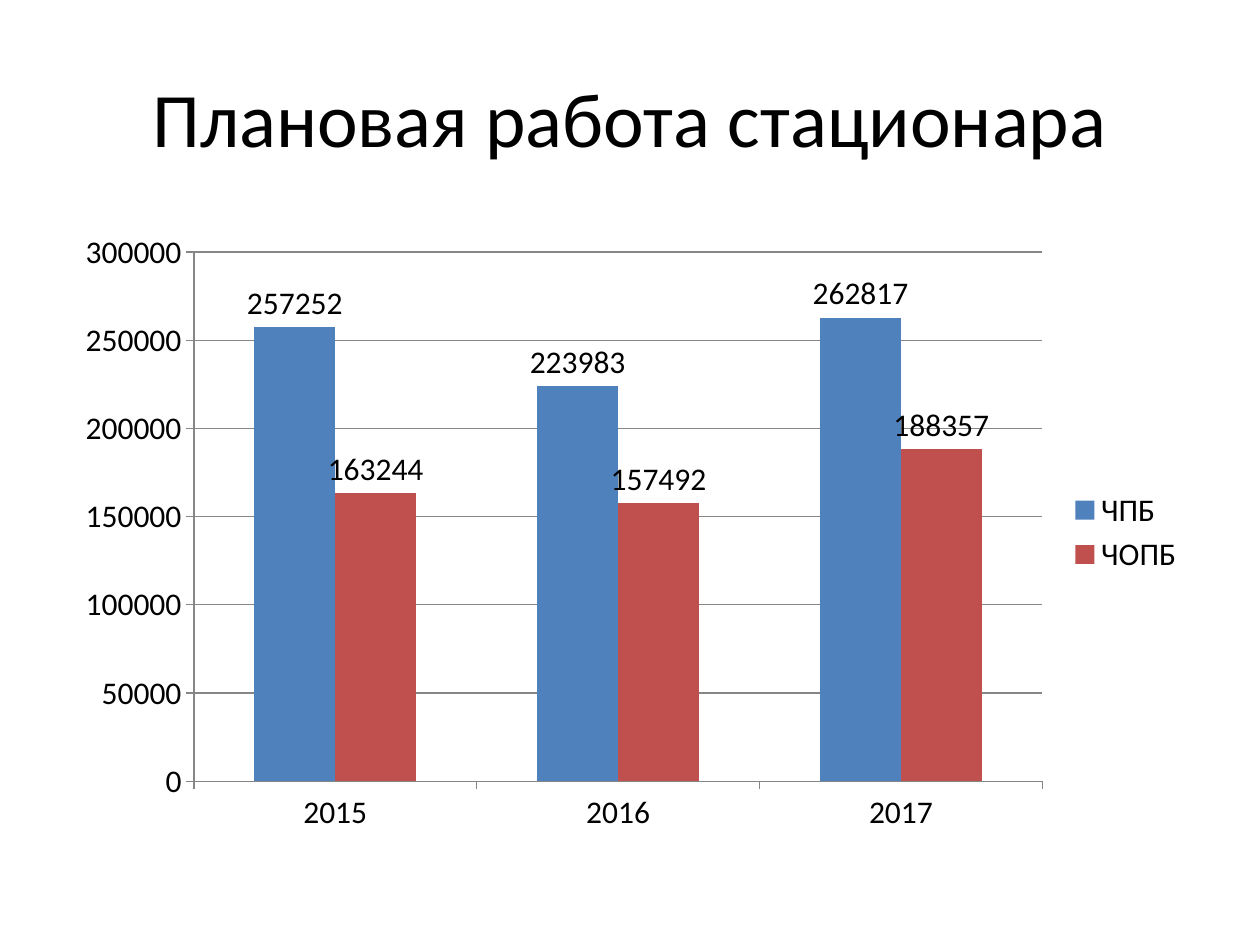
from pptx import Presentation
from pptx.chart.data import CategoryChartData
from pptx.dml.color import RGBColor
from pptx.enum.chart import XL_CHART_TYPE, XL_LABEL_POSITION, XL_LEGEND_POSITION, XL_TICK_MARK
from pptx.enum.text import MSO_ANCHOR, PP_ALIGN
from pptx.util import Inches, Pt

COLUMNS = XL_CHART_TYPE.COLUMN_CLUSTERED
OUTSIDE_END = XL_LABEL_POSITION.OUTSIDE_END
RIGHT = XL_LEGEND_POSITION.RIGHT
TICK_OUTSIDE = XL_TICK_MARK.OUTSIDE
MIDDLE = MSO_ANCHOR.MIDDLE
CENTER = PP_ALIGN.CENTER

TITLE = "Плановая работа стационара"
YEARS = ["2015", "2016", "2017"]
SERIES = [
    ("ЧПБ", [257252, 223983, 262817], "blue"),
    ("ЧОПБ", [163244, 157492, 188357], "red"),
]
COLORS = {"text": "000000", "line": "868686", "blue": "4F81BD", "red": "C0504D"}
TITLE_BOX = (0.5, 0.3, 9, 1.25)
CHART_BOX = (0.5, 1.75, 9, 4.95)


def color(name):
    return RGBColor.from_string(COLORS[name])


def apply(target, values):
    for name, value in values.items():
        setattr(target, name, value)


def format_font(font, size):
    apply(font, {"name": "Calibri", "size": Pt(size), "bold": False})
    font.color.rgb = color("text")


def format_line(line):
    line.color.rgb = color("line")
    line.width = Pt(0.75)


def add_title(slide):
    frame = slide.shapes.add_textbox(*map(Inches, TITLE_BOX)).text_frame
    apply(frame, {"word_wrap": True, "vertical_anchor": MIDDLE})
    paragraph = frame.paragraphs[0]
    apply(paragraph, {"text": TITLE, "alignment": CENTER})
    format_font(paragraph.runs[0].font, 44)


def add_column_chart(slide):
    data = CategoryChartData()
    data.categories = YEARS
    for name, values, _ in SERIES:
        data.add_series(name, values)
    chart = slide.shapes.add_chart(COLUMNS, *map(Inches, CHART_BOX), data).chart
    apply(chart, {"has_title": False, "has_legend": True})
    apply(chart.legend, {"position": RIGHT, "include_in_layout": False})
    format_font(chart.font, 18)

    for axis in (chart.category_axis, chart.value_axis):
        axis.major_tick_mark = TICK_OUTSIDE
        format_line(axis.format.line)
    apply(chart.value_axis, {
        "minimum_scale": 0,
        "maximum_scale": 300000,
        "major_unit": 50000,
        "has_major_gridlines": True,
    })
    format_line(chart.value_axis.major_gridlines.format.line)

    plot = chart.plots[0]
    apply(plot, {"gap_width": 150, "overlap": 0, "vary_by_categories": False})
    for series, (_, _, fill_color) in zip(plot.series, SERIES):
        series.format.fill.solid()
        series.format.fill.fore_color.rgb = color(fill_color)
        apply(series.data_labels, {"show_value": True, "position": OUTSIDE_END})


def main():
    presentation = Presentation()
    apply(presentation, {"slide_width": Inches(10), "slide_height": Inches(7.5)})
    slide = presentation.slides.add_slide(presentation.slide_layouts[6])
    add_title(slide)
    add_column_chart(slide)
    presentation.save("out.pptx")


if __name__ == "__main__":
    main()
